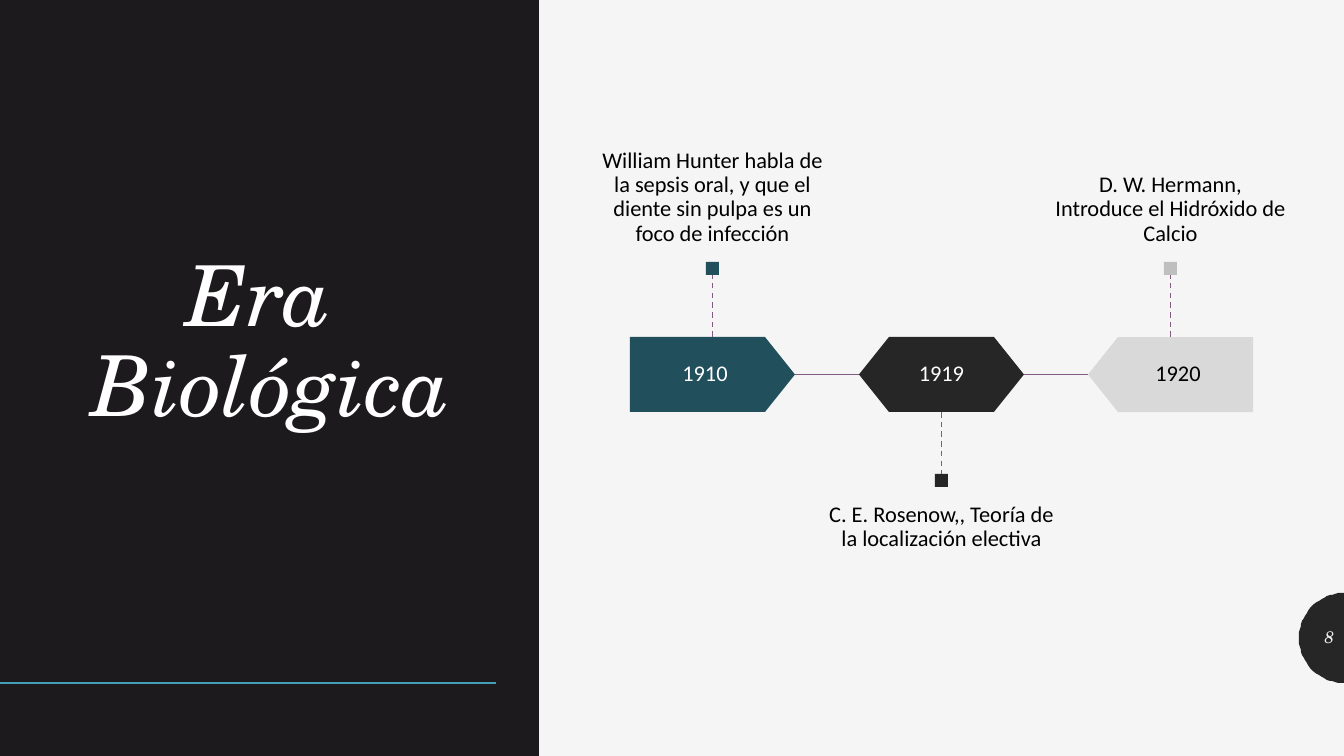
from math import cos, pi, sin
from lxml.etree import SubElement
from pptx import Presentation
from pptx.dml.color import RGBColor
from pptx.enum.dml import MSO_LINE
from pptx.enum.shapes import MSO_CONNECTOR, MSO_SHAPE as Kind
from pptx.enum.text import MSO_ANCHOR as Anchor, MSO_AUTO_SIZE as Fit, PP_ALIGN as Align
from pptx.oxml.ns import qn
from pptx.util import Pt

# Content: year, note, shape, turn, fill, year colour, marker colour, note above
TITLE = "Era \vBiológica"
NUMBER = "8"
EVENTS = [
    ("1910", "William Hunter habla de la sepsis oral, y que el diente sin pulpa es un foco de infección",
     Kind.PENTAGON, 0, "224F5C", "FFFFFF", "224F5C", True),
    ("1919", "C. E. Rosenow,, Teoría de la localización electiva",
     Kind.HEXAGON, 0, "262626", "FFFFFF", "262626", False),
    ("1920", "D. W. Hermann, Introduce el Hidróxido de Calcio",
     Kind.PENTAGON, 180, "D9D9D9", "000000", "BFBFBF", True),
]
SERIF, SANS = "TeX Gyre Schola", "Calibri"
DARK, PALE, PLUM = "262626", "F5F5F5", "835B82"

# Layout in px
PX = 914400 / 100.8
WIDE, HIGH = 1344, 756
LEFT, STEP, TOP = 630, 229, 337
ARROW_W, ARROW_H = 165, 75
STEM, MARK = 62, 13
NOTE_W, NOTE_H = 230, 200
YEAR_W = 150
DISC_Y, DISC_R = 638, 45


def emu(*px):
    return [round(v * PX) for v in px]


def rgb(code):
    return RGBColor.from_string(code)


def paint(shape, code):
    shape.shadow.inherit = False
    shape.fill.solid()
    shape.fill.fore_color.rgb = rgb(code)
    shape.line.fill.background()


def block(kind, box, code):
    shape = slide.shapes.add_shape(kind, *emu(*box))
    paint(shape, code)
    return shape


def rule(ends, code, width, dash=False):
    line = slide.shapes.add_connector(MSO_CONNECTOR.STRAIGHT, *emu(*ends))
    line.line.color.rgb = rgb(code)
    line.line.width = Pt(width)
    if dash:
        line.line.dash_style = MSO_LINE.DASH
    SubElement(line.element.spPr, qn("a:effectLst"))


def write(shape, text, size, font, code, align, anchor, italic=False, pads=(10, 5)):
    frame = shape.text_frame
    frame.text = text
    frame.word_wrap = True
    frame.auto_size = Fit.NONE
    frame.vertical_anchor = anchor
    frame.margin_left, frame.margin_top = emu(*pads)
    frame.margin_right, frame.margin_bottom = emu(*pads)
    para = frame.paragraphs[0]
    para.alignment = align
    para.line_spacing = 0.9
    para.font.size = Pt(size)
    para.font.name = font
    para.font.italic = italic
    para.font.color.rgb = rgb(code)
    return para


def label(box, text, code, anchor, pads):
    shape = slide.shapes.add_textbox(*emu(*box))
    para = write(shape, text, 16, SANS, code, Align.CENTER, anchor, pads=pads)
    para.space_after = Pt(5.6)


deck = Presentation()
deck.slide_width, deck.slide_height = emu(WIDE, HIGH)
slide = deck.slides.add_slide(deck.slide_layouts[5])
slide.background.fill.solid()
slide.background.fill.fore_color.rgb = rgb(PALE)

# Dark panel and accent line
block(Kind.RECTANGLE, (0, 0, 539, HIGH), "1D1A1D")
rule((0, 683, 496, 683), "439EB7", 2)

# Title, brought in front of the panel
title = slide.shapes.title
title.left, title.top, title.width, title.height = emu(60, 195, 422, 245)
write(title, TITLE, 60, SERIF, "FFFFFF", Align.CENTER, Anchor.BOTTOM, True)
title.element.getparent().append(title.element)

# Half disc with the page number
arc = [(WIDE - DISC_R * sin(pi * i / 48), DISC_Y - DISC_R * cos(pi * i / 48)) for i in range(49)]
pen = slide.shapes.build_freeform(*arc[0], scale=PX)
pen.add_line_segments(arc[1:], close=True)
paint(pen.convert_to_shape(), DARK)
page = slide.shapes.add_textbox(*emu(WIDE - DISC_R, 618, DISC_R, 40))
write(page, NUMBER, 12, SERIF, PALE, Align.RIGHT, Anchor.MIDDLE, True)

# Timeline
for i, (year, note, kind, turn, fill, ink, mark, above) in enumerate(EVENTS):
    x = LEFT + i * STEP
    mid = x + ARROW_W / 2
    if i:
        y = TOP + ARROW_H / 2
        rule((x - STEP + ARROW_W, y, x, y), PLUM, 0.5)

    # Year arrow
    arrow = block(kind, (x, TOP, ARROW_W, ARROW_H), fill)
    arrow.adjustments[0] = 0.4
    arrow.rotation = turn
    shift = i * (ARROW_W - YEAR_W) / 2
    label((x + shift, TOP, YEAR_W, ARROW_H), year, ink, Anchor.MIDDLE, (13, 13))

    # Stem, marker and note
    if above:
        root, tip = TOP, TOP - STEM
        square, top, anchor = tip - MARK, tip - MARK - NOTE_H, Anchor.BOTTOM
    else:
        root, tip = TOP + ARROW_H, TOP + ARROW_H + STEM
        square, top, anchor = tip, tip + MARK, Anchor.TOP
    rule((mid, root, mid, tip), PLUM, 1, True)
    block(Kind.RECTANGLE, (mid - MARK / 2, square, MARK, MARK), mark)
    label((mid - NOTE_W / 2, top, NOTE_W, NOTE_H), note, "000000", anchor, (0, 16))

deck.save("out.pptx")
